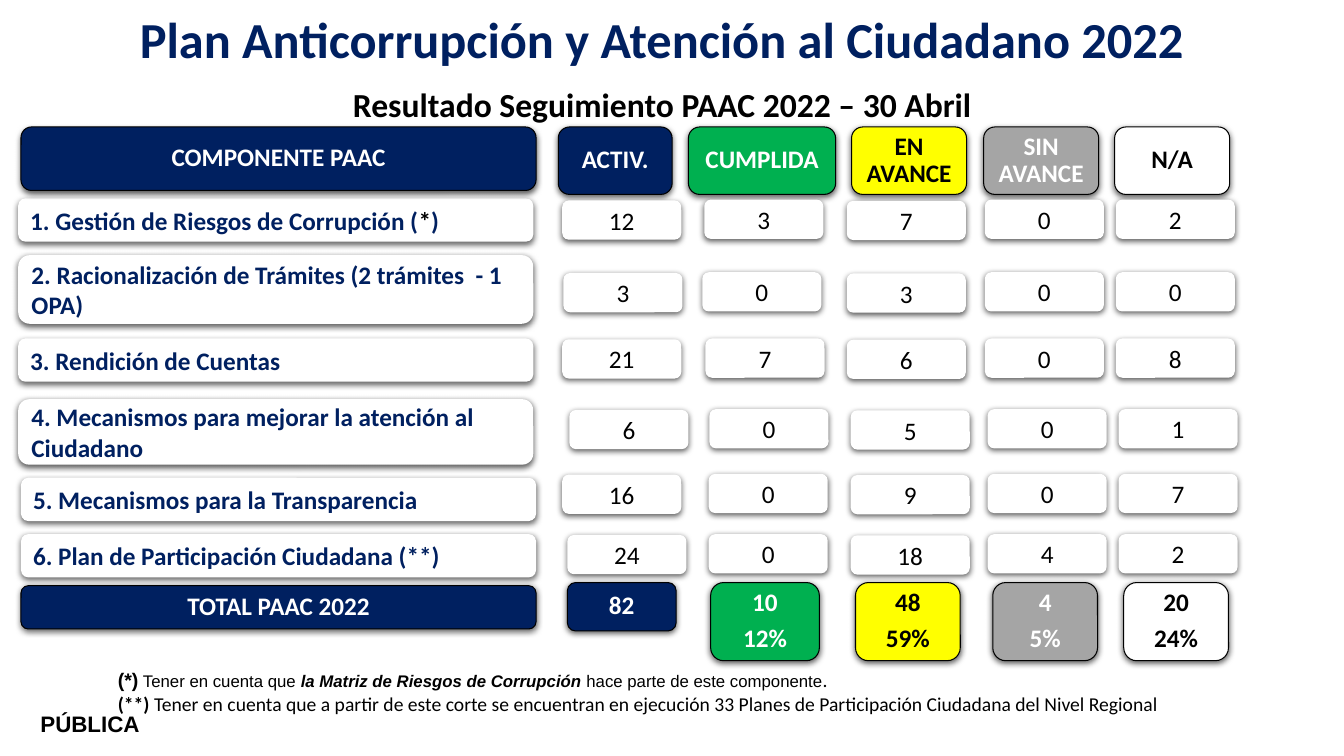
import pptx
import pptx.util
import pptx.dml.color
import pptx.enum.shapes
import pptx.enum.text
import pptx.oxml.ns
import lxml.etree

Cm = pptx.util.Cm
Pt = pptx.util.Pt
ALIGN = pptx.enum.text.PP_ALIGN

COLORS = {"navy": "002060", "green": "00B050", "yellow": "FFFF00", "gray": "A5A5A5",
          "white": "FFFFFF", "black": "000000"}

BODY = {"name": "Calibri", "size": Pt(18), "bold": False}
BOLD = {"name": "Calibri", "size": Pt(18), "bold": True}
TITLE = {"name": "Calibri", "size": Pt(36), "bold": True}
SUBTITLE = {"name": "Calibri", "size": Pt(24), "bold": True}
MARK = {"name": "Arial", "size": Pt(14), "bold": True}
NOTE = {"name": "Arial", "size": Pt(12), "bold": False}
NOTE_STRONG = {"name": "Arial", "size": Pt(12), "bold": True, "italic": True}
NOTE_BODY = {"name": "Calibri", "size": Pt(14), "bold": False}
NOTE_MARK = {"name": "Calibri", "size": Pt(14), "bold": True}
LABEL = {"name": "Arial", "size": Pt(16), "bold": True}

COMPONENTS = [
    (0.46, 5.0, 1.09, [("1. Gestión de Riesgos de Corrupción (", "navy"), ("*", "black"), (")", "navy")]),
    (0.46, 6.43, 1.73, [("2. Racionalización de Trámites (2 trámites  - 1 OPA)", "navy")]),
    (0.46, 8.53, 1.09, [("3. Rendición de Cuentas", "navy")]),
    (0.46, 10.06, 1.65, [("4. Mecanismos para mejorar la atención al Ciudadano", "navy")]),
    (0.53, 12.04, 1.09, [("5. Mecanismos para la Transparencia", "navy")]),
    (0.53, 13.46, 1.09, [("6. Plan de Participación Ciudadana (**)", "navy")]),
]
COMPONENT_WIDTH = 12.98

COLUMNS = [
    {"name": "ACTIV.", "fill": "navy", "ink": "white", "header": (14.07, 2.87),
     "values": [12, 3, 21, 6, 16, 24], "lefts": [14.17, 14.2, 14.17, 14.35, 14.17, 14.3], "drop": 0.02,
     "total": ["82"], "total_box": (14.3, 2.74, 1.22)},
    {"name": "CUMPLIDA", "fill": "green", "ink": "white", "header": (17.35, 3.71),
     "values": [3, 0, 7, 0, 0, 0], "lefts": [17.75, 17.7, 17.78, 17.88, 17.86, 17.86], "drop": 0,
     "total": ["10", "12%"], "total_box": (17.91, 2.74, 1.97)},
    {"name": "EN AVANCE", "fill": "yellow", "ink": "black", "header": (21.46, 2.9),
     "values": [7, 3, 6, 5, 9, 18], "lefts": [21.34] * 3 + [21.44] * 3, "drop": 0.03,
     "total": ["48", "59%"], "total_box": (21.56, 2.64, 1.97)},
    {"name": "SIN AVANCE", "fill": "gray", "ink": "white", "header": (24.79, 2.9),
     "values": [0, 0, 0, 0, 0, 4], "lefts": [24.82] * 3 + [24.89] * 3, "drop": 0,
     "total": ["4", "5%"], "total_box": (25.02, 2.64, 1.97)},
    {"name": "N/A", "fill": "white", "ink": "black", "header": (28.09, 2.9),
     "values": [2, 0, 8, 1, 7, 2], "lefts": [28.12] * 3 + [28.19] * 3, "drop": 0,
     "total": ["20", "24%"], "total_box": (28.32, 2.64, 1.97)},
]
VALUE_TOPS = [5.03, 6.86, 8.53, 10.31, 11.94, 13.46]
VALUE_SIZE = (3.0, 0.99)
HEADER_TOP, HEADER_HEIGHT = 3.2, 1.7
TOTAL_TOP = 14.68

TEXTS = [
    ((2.39, 0.08, 28.6, 3.33), ALIGN.CENTER, [
        [("Plan Anticorrupción y Atención al Ciudadano 2022", "navy", TITLE)],
        [("Resultado Seguimiento PAAC 2022 – 30 Abril", "black", SUBTITLE)]], Pt(11)),
    ((2.72, 16.71, 30.99, 1.45), ALIGN.LEFT, [
        [("(*)", "black", MARK), (" Tener en cuenta que ", "black", NOTE),
         ("la Matriz de Riesgos de Corrupción ", "black", NOTE_STRONG),
         ("hace parte de este componente", "black", NOTE), (".", "black", NOTE_BODY)],
        [("(**)", "black", NOTE_MARK),
         (" Tener en cuenta que a partir de este corte se encuentran en ejecución 33 Planes de "
          "Participación Ciudadana del Nivel Regional", "black", NOTE_BODY)]], Pt(0)),
    ((0.48, 17.78, 3.58, 0.94), ALIGN.CENTER, [[("PÚBLICA", "black", LABEL)]], Pt(0)),
]


def rgb(name):
    return pptx.dml.color.RGBColor.from_string(COLORS[name])


def write(frame, paragraphs, alignment, formats):
    frame.word_wrap = True
    for index, runs in enumerate(paragraphs):
        paragraph = frame.paragraphs[0] if index == 0 else frame.add_paragraph()
        paragraph.alignment = alignment
        for key, value in formats.items():
            if index or key != "space_before":
                setattr(paragraph, key, value)
        for text, color, font in runs:
            run = paragraph.add_run()
            run.text = text
            run.font.color.rgb = rgb(color)
            for key, value in font.items():
                setattr(run.font, key, value)


def add_shadow(shape):
    shape.shadow.inherit = False
    qn = pptx.oxml.ns.qn
    effects = shape._element.spPr.find(qn("a:effectLst"))
    shadow = lxml.etree.SubElement(effects, qn("a:outerShdw"), blurRad=str(Pt(4.5)), dist=str(Pt(1.5)),
                                   dir="5400000", algn="ctr", rotWithShape="0")
    color = lxml.etree.SubElement(shadow, qn("a:srgbClr"), val=COLORS["black"])
    lxml.etree.SubElement(color, qn("a:alpha"), val="63000")


def add_card(slide, box, fill, paragraphs, alignment=ALIGN.CENTER, outlined=False):
    shape = slide.shapes.add_shape(pptx.enum.shapes.MSO_SHAPE.ROUNDED_RECTANGLE, *map(Cm, box))
    shape.fill.solid()
    shape.fill.fore_color.rgb = rgb(fill)
    if outlined:
        shape.line.color.rgb = rgb("black")
        shape.line.width = Pt(0.75)
    else:
        shape.line.fill.background()
    add_shadow(shape)
    shape.text_frame.vertical_anchor = pptx.enum.text.MSO_ANCHOR.MIDDLE
    formats = {"line_spacing": 0.9, "space_after": Pt(6.3)} if outlined else {}
    write(shape.text_frame, paragraphs, alignment, formats)


def add_heading(slide, box, fill, ink, lines):
    add_card(slide, box, fill, [[(line, ink, BOLD)] for line in lines], outlined=True)


def main():
    presentation = pptx.Presentation()
    presentation.slide_width, presentation.slide_height = Cm(33.87), Cm(19.05)
    slide = presentation.slides.add_slide(presentation.slide_layouts[6])

    for left, top, height, parts in COMPONENTS:
        runs = [(text, color, BOLD) for text, color in parts]
        add_card(slide, (left, top, COMPONENT_WIDTH, height), "white", [runs], ALIGN.LEFT)
    add_heading(slide, (0.53, HEADER_TOP, COMPONENT_WIDTH, 1.6), "navy", "white", ["COMPONENTE PAAC"])
    add_heading(slide, (0.53, 14.76, COMPONENT_WIDTH, 1.09), "navy", "white", ["TOTAL PAAC 2022"])

    for column in COLUMNS:
        left, width = column["header"]
        add_heading(slide, (left, HEADER_TOP, width, HEADER_HEIGHT), column["fill"], column["ink"],
                    [column["name"]])
        for value, left, top in zip(column["values"], column["lefts"], VALUE_TOPS):
            add_card(slide, (left, top + column["drop"], *VALUE_SIZE), "white",
                     [[(str(value), "black", BODY)]])
        left, width, height = column["total_box"]
        add_heading(slide, (left, TOTAL_TOP, width, height), column["fill"], column["ink"], column["total"])

    for box, alignment, paragraphs, gap in TEXTS:
        frame = slide.shapes.add_textbox(*map(Cm, box)).text_frame
        write(frame, paragraphs, alignment, {"space_before": gap})

    presentation.save("out.pptx")


if __name__ == "__main__":
    main()
